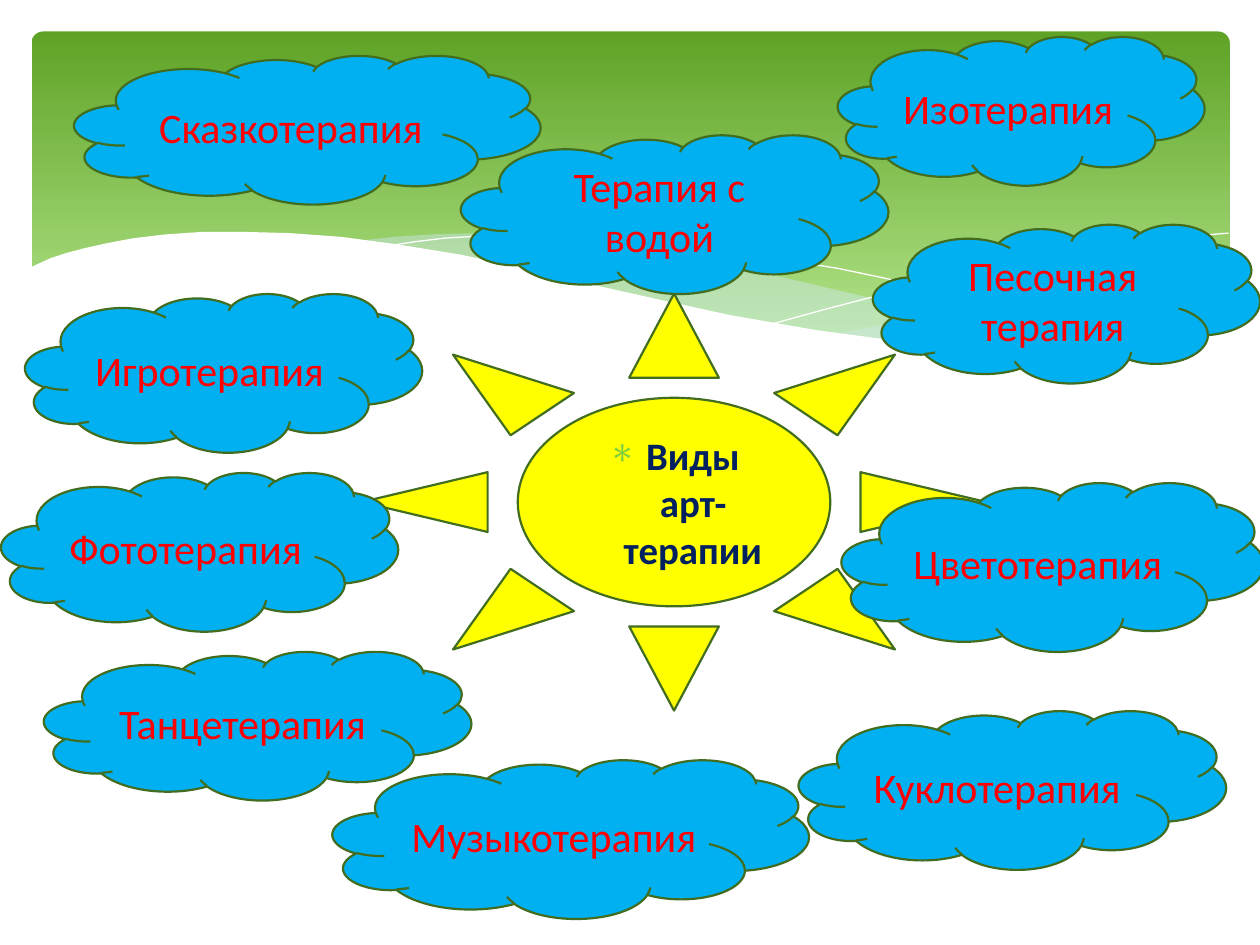
from lxml import etree
from pptx import Presentation
from pptx.dml.color import RGBColor
from pptx.enum.shapes import MSO_SHAPE
from pptx.enum.text import MSO_ANCHOR, PP_ALIGN
from pptx.oxml.ns import qn
from pptx.util import Inches, Pt

CLOUD, SUN, ROUNDED = MSO_SHAPE.CLOUD, MSO_SHAPE.SUN, MSO_SHAPE.ROUNDED_RECTANGLE
CENTER, MIDDLE = PP_ALIGN.CENTER, MSO_ANCHOR.MIDDLE
BLANK_LAYOUT = 6

WHITE, PALE_BLUE = "FFFFFF", "D6ECFF"
GREEN_TOP, GREEN_BOTTOM, GREEN_LINE, GREEN_BULLET = "5FA326", "B2E389", "426D1F", "7FD13B"
YELLOW, SKY, RED, NAVY = "FFFF00", "00B0F0", "FF0000", "002060"

RIGHT_WAVE = [
    (9.76, 2), (9.48, 2.04), (9.06, 2.13), (8.61, 2.23), (8.05, 2.37), (7.53, 2.48),
    (7.06, 2.57), (6.61, 2.65), (6.91, 2.69), (7.32, 2.74), (7.69, 2.77), (8.03, 2.78),
    (8.44, 2.77), (8.81, 2.73), (9.13, 2.67), (9.42, 2.59), (9.76, 2.47)]
MIDDLE_WAVE = [
    (8.93, 2.73), (8.37, 2.65), (7.75, 2.54), (7.06, 2.4), (6.29, 2.22), (5.84, 2.11),
    (5.41, 2.03), (5.02, 1.96), (4.65, 1.91), (4.2, 1.87), (3.8, 1.85), (3.44, 1.86),
    (3.13, 1.88), (2.86, 1.91), (3.23, 1.96), (3.62, 2.03), (4.04, 2.11), (4.49, 2.22),
    (5.3, 2.4), (5.84, 2.52), (6.34, 2.61), (6.8, 2.68), (7.22, 2.74), (7.61, 2.77),
    (7.96, 2.78), (8.38, 2.78), (8.67, 2.76), (8.93, 2.73)]
FALLING_LINE = [
    (3.09, 1.95), (3.28, 1.92), (3.53, 1.89), (3.87, 1.87), (4.33, 1.87), (4.69, 1.89),
    (5.1, 1.92), (5.56, 1.97), (6.08, 2.04), (6.65, 2.13), (7.27, 2.26), (7.95, 2.41),
    (8.69, 2.61), (9.07, 2.72)]
RISING_LINE = [
    (6.13, 2.57), (6.53, 2.46), (6.95, 2.35), (7.48, 2.23), (8.06, 2.1), (8.66, 1.99),
    (9.1, 1.92), (9.51, 1.87), (9.75, 1.85)]
WHITE_WAVE = [
    (9.77, 2.46), (9.5, 2.56), (9.2, 2.65), (8.87, 2.71), (8.5, 2.75), (8.09, 2.77),
    (7.61, 2.75), (7.08, 2.7), (6.48, 2.62), (5.79, 2.5), (5.29, 2.39), (4.75, 2.27),
    (4.18, 2.13), (3.65, 2.02), (3.16, 1.94), (2.71, 1.88), (2.3, 1.85), (1.93, 1.84),
    (1.61, 1.84), (1.32, 1.86), (1.06, 1.89), (0.85, 1.93), (0.67, 1.97), (0.52, 2.01),
    (0.4, 2.05), (0.29, 2.1), (0.23, 2.13), (0.23, 3.29), (9.77, 3.29)]

# Label, left, top, width, height; a line break starts a new paragraph
THERAPIES = [
    ("Изотерапия", 6.65, 0.29, 2.91, 1.18),
    ("Песочная\nтерапия", 6.93, 1.78, 3.07, 1.26),
    ("Цветотерапия", 6.68, 3.83, 3.35, 1.34),
    ("Куклотерапия", 6.34, 5.64, 3.39, 1.26),
    ("Музыкотерапия", 2.64, 6.03, 3.78, 1.26),
    ("Танцетерапия", 0.35, 5.17, 3.39, 1.18),
    ("Фототерапия", 0.01, 3.75, 3.15, 1.26),
    ("Игротерапия", 0.2, 2.33, 3.15, 1.26),
    ("Сказкотерапия", 0.59, 0.44, 3.7, 1.18),
    ("Терапия с водой", 3.66, 1.07, 3.39, 1.26),
]


def color(value):
    return RGBColor.from_string(value)


def write_text(shape, text, *, size=24, text_color=RED, bold=False, font="Calibri"):
    """Fill the shape with centred text, one paragraph a line."""
    frame = shape.text_frame
    frame.word_wrap = True
    frame.vertical_anchor = MIDDLE
    frame.text = text
    for paragraph in frame.paragraphs:
        paragraph.alignment = CENTER
        for run in paragraph.runs:
            run.font.name = font
            run.font.size = Pt(size)
            run.font.bold = bold
            run.font.color.rgb = color(text_color)


def add_bullet(paragraph, character, fill, indent):
    properties = paragraph._p.get_or_add_pPr()
    properties.set("marL", str(indent))
    properties.set("indent", str(-indent))
    bullet_color = etree.SubElement(properties, qn("a:buClr"))
    etree.SubElement(bullet_color, qn("a:srgbClr"), val=fill)
    etree.SubElement(properties, qn("a:buChar"), char=character)


class SlidePainter:
    def __init__(self, slide):
        self.slide = slide
        self.outline = GREEN_LINE
        self.outline_width = Pt(1.25)

    def panel(self, left, top, width, height):
        """Add the rounded header panel with its vertical gradient."""
        shape = self.slide.shapes.add_shape(
            ROUNDED, Inches(left), Inches(top), Inches(width), Inches(height))
        shape.adjustments[0] = 0.034
        shape.shadow.inherit = False
        shape.line.fill.background()
        shape.fill.gradient()
        shape.fill.gradient_angle = 270
        stops = zip(shape.fill.gradient_stops, (0, 0.9), (GREEN_TOP, GREEN_BOTTOM))
        for stop, position, value in stops:
            stop.position = position
            stop.color.rgb = color(value)

    def curve(self, points, closed):
        (start_x, start_y), *rest = [(Inches(x), Inches(y)) for x, y in points]
        builder = self.slide.shapes.build_freeform(start_x, start_y)
        builder.add_line_segments(rest, close=closed)
        shape = builder.convert_to_shape()
        shape.shadow.inherit = False
        return shape

    def wave(self, points, fill, opacity=100):
        shape = self.curve(points, closed=True)
        shape.line.fill.background()
        shape.fill.solid()
        shape.fill.fore_color.rgb = color(fill)
        if opacity < 100:
            fill_color = shape._element.spPr.find(qn("a:solidFill"))[0]
            etree.SubElement(fill_color, qn("a:alpha"), val=str(opacity * 1000))

    def wave_line(self, points):
        shape = self.curve(points, closed=False)
        shape.fill.background()
        shape.line.color.rgb = color(WHITE)
        shape.line.width = Pt(0)

    def label(self, kind, text, box, fill, **text_format):
        """Add an outlined preset shape with centred text."""
        shape = self.slide.shapes.add_shape(kind, *map(Inches, box))
        shape.shadow.inherit = False
        shape.fill.solid()
        shape.fill.fore_color.rgb = color(fill)
        shape.line.color.rgb = color(self.outline)
        shape.line.width = self.outline_width
        write_text(shape, text, **text_format)
        return shape


def main():
    presentation = Presentation()
    presentation.slide_width = Inches(10)
    presentation.slide_height = Inches(7.5)
    slide = presentation.slides.add_slide(presentation.slide_layouts[BLANK_LAYOUT])
    painter = SlidePainter(slide)

    painter.panel(0.25, 0.25, 9.51, 2.7)
    painter.wave(RIGHT_WAVE, PALE_BLUE, opacity=29)
    painter.wave(MIDDLE_WAVE, PALE_BLUE, opacity=40)
    painter.wave_line(FALLING_LINE)
    painter.wave_line(RISING_LINE)
    painter.wave(WHITE_WAVE, WHITE)

    sun = painter.label(SUN, "Виды арт-терапии", (2.87, 2.33, 4.96, 3.31), YELLOW,
                        size=22.2, text_color=NAVY, bold=True)
    heading = sun.text_frame.paragraphs[0]
    heading.space_before = Pt(4.4)
    add_bullet(heading, "∗", GREEN_BULLET, Inches(0.3))

    for text, *box in THERAPIES:
        painter.label(CLOUD, text, box, SKY)

    presentation.save("out.pptx")


if __name__ == "__main__":
    main()
